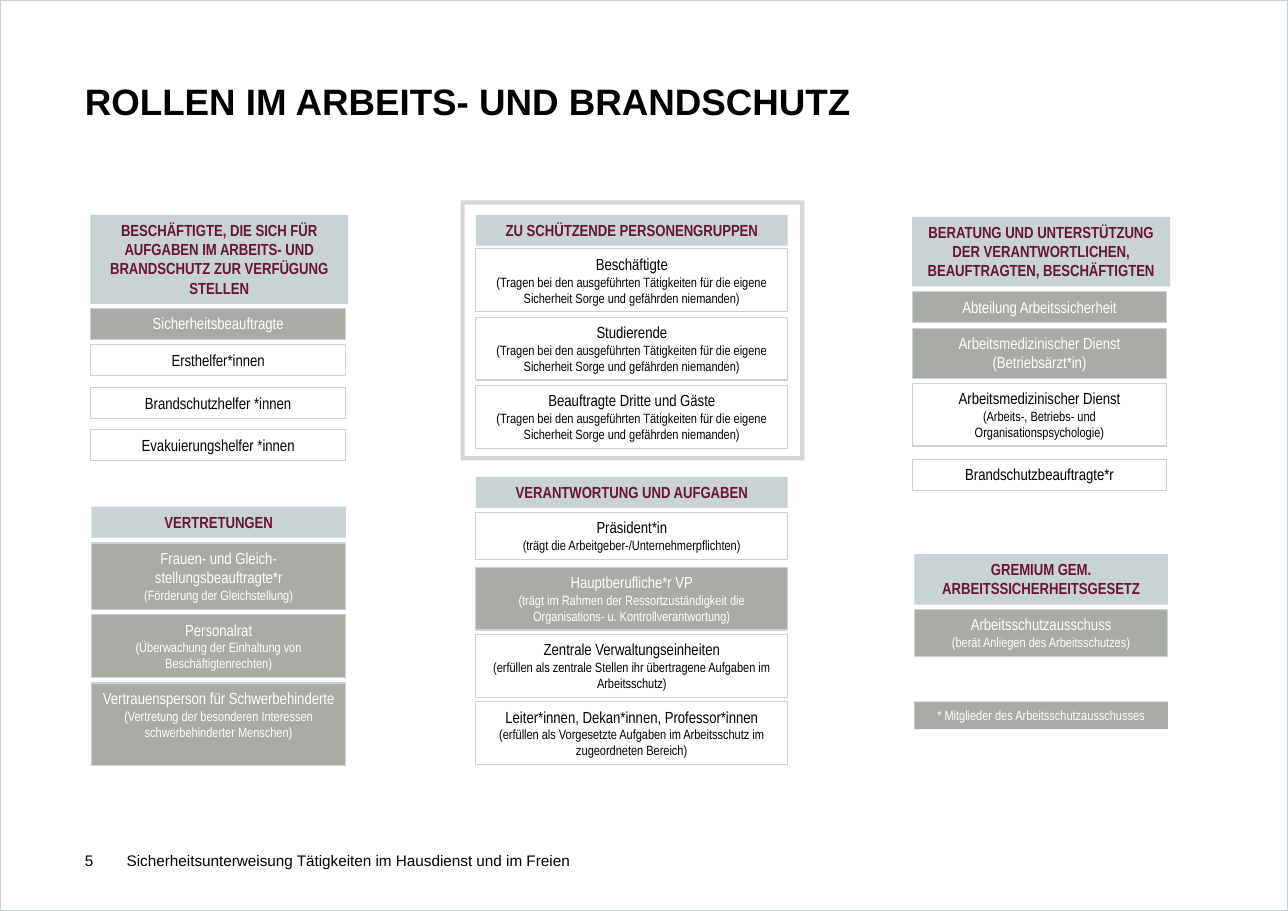
import pptx
import pptx.dml.color
import pptx.enum.shapes
import pptx.enum.text
import pptx.util

RGB = pptx.dml.color.RGBColor
SHAPE = pptx.enum.shapes.MSO_SHAPE
ANCHOR = pptx.enum.text.MSO_ANCHOR
ALIGN = pptx.enum.text.PP_ALIGN
Pt = pptx.util.Pt

PX = 9144
BLACK = RGB(0x00, 0x00, 0x00)
WHITE = RGB(0xFF, 0xFF, 0xFF)
MIST = RGB(0xC9, 0xD2, 0xD5)
STONE = RGB(0xA8, 0xAC, 0xA5)
FRAME = RGB(0xD6, 0xD7, 0xD4)
WINE = RGB(0x69, 0x16, 0x33)

TITLE_FONT = {"name": "Arial", "size": Pt(24), "bold": True}
FOOTER_FONT = {"name": "Arial", "size": Pt(10), "bold": False}
HEADING_FONT = {"name": "Arial Narrow", "size": Pt(10.5), "bold": True}
ROLE_FONT = {"name": "Arial Narrow", "size": Pt(10.5), "bold": False}
DETAIL_FONT = {"name": "Arial Narrow", "size": Pt(8.8), "bold": False}

HEADING = {"fill": MIST, "line": None, "ink": WINE, "fonts": [HEADING_FONT]}
MEMBER = {"fill": STONE, "line": MIST, "ink": WHITE, "fonts": [ROLE_FONT, DETAIL_FONT]}
OTHER = {"fill": None, "line": MIST, "ink": BLACK, "fonts": [ROLE_FONT, DETAIL_FONT]}
LEGEND = {"fill": STONE, "line": None, "ink": WHITE, "fonts": [DETAIL_FONT]}

DUTY_OF_CARE = ("(Tragen bei den ausgeführten Tätigkeiten für die eigene "
                "Sicherheit Sorge und gefährden niemanden)")

GROUPS = [
    (82, 234, [
        (195, 81, HEADING, ["BESCHÄFTIGTE, DIE SICH FÜR AUFGABEN IM ARBEITS- UND "
                            "BRANDSCHUTZ ZUR VERFÜGUNG STELLEN"]),
    ]),
    (82, 232, [
        (280, 28, MEMBER, ["Sicherheitsbeauftragte"]),
        (313, 28, OTHER, ["Ersthelfer*innen"]),
        (352, 28, OTHER, ["Brandschutzhelfer *innen"]),
        (390, 28, OTHER, ["Evakuierungshelfer *innen"]),
    ]),
    (83, 231, [
        (460, 28, HEADING, ["VERTRETUNGEN"]),
        (493, 60, MEMBER, ["Frauen- und Gleich-stellungsbeauftragte*r",
                           "(Förderung der Gleichstellung)"]),
        (558, 57, MEMBER, ["Personalrat",
                           "(Überwachung der Einhaltung von Beschäftigtenrechten)"]),
        (620, 75, MEMBER, ["Vertrauensperson für Schwerbehinderte",
                           "(Vertretung der besonderen Interessen "
                           "schwerbehinderter Menschen)"]),
    ]),
    (432, 283, [
        (195, 28, HEADING, ["ZU SCHÜTZENDE PERSONENGRUPPEN"]),
        (226, 57, OTHER, ["Beschäftigte", DUTY_OF_CARE]),
        (288, 57, OTHER, ["Studierende", DUTY_OF_CARE]),
        (350, 57, OTHER, ["Beauftragte Dritte und Gäste", DUTY_OF_CARE]),
        (433, 28, HEADING, ["VERANTWORTUNG UND AUFGABEN"]),
        (465, 43, OTHER, ["Präsident*in",
                          "(trägt die Arbeitgeber-/Unternehmerpflichten)"]),
        (515, 57, MEMBER, ["Hauptberufliche*r VP",
                           "(trägt im Rahmen der Ressortzuständigkeit die "
                           "Organisations- u. Kontrollverantwortung)"]),
        (576, 57, OTHER, ["Zentrale Verwaltungseinheiten",
                          "(erfüllen als zentrale Stellen ihr übertragene "
                          "Aufgaben im Arbeitsschutz)"]),
        (637, 57, OTHER, ["Leiter*innen, Dekan*innen, Professor*innen",
                          "(erfüllen als Vorgesetzte Aufgaben im Arbeitsschutz "
                          "im zugeordneten Bereich)"]),
    ]),
    (828, 234, [
        (197, 63, HEADING, ["BERATUNG UND UNTERSTÜTZUNG DER VERANTWORTLICHEN, "
                            "BEAUFTRAGTEN, BESCHÄFTIGTEN"]),
    ]),
    (828, 231, [
        (265, 28, MEMBER, ["Abteilung Arbeitssicherheit"]),
        (298, 46, MEMBER, ["Arbeitsmedizinischer Dienst (Betriebsärzt*in)"]),
        (348, 57, OTHER, ["Arbeitsmedizinischer Dienst",
                          "(Arbeits-, Betriebs- und Organisationspsychologie)"]),
        (417, 28, OTHER, ["Brandschutzbeauftragte*r"]),
    ]),
    (830, 230, [
        (503, 46, HEADING, ["GREMIUM GEM. ARBEITSSICHERHEITSGESETZ"]),
        (553, 43, MEMBER, ["Arbeitsschutzausschuss",
                           "(berät Anliegen des Arbeitsschutzes)"]),
        (637, 25, LEGEND, ["* Mitglieder des Arbeitsschutzausschusses"]),
    ]),
]


class RoleChart:
    def __init__(self, deck):
        self.slide = deck.slides.add_slide(deck.slide_layouts[5])

    def lettering(self, frame, texts, fonts, ink, align, **layout):
        settings = {"word_wrap": True, "vertical_anchor": ANCHOR.TOP,
                    "auto_size": pptx.enum.text.MSO_AUTO_SIZE.NONE, **layout}
        for name, value in settings.items():
            setattr(frame, name, value)
        for index, (text, font) in enumerate(zip(texts, fonts)):
            paragraph = frame.add_paragraph() if index else frame.paragraphs[0]
            paragraph.text = text
            paragraph.alignment = align
            for name, value in font.items():
                setattr(paragraph.font, name, value)
            paragraph.font.color.rgb = ink

    def title(self, text, left, top, width, height):
        heading = self.slide.shapes.title
        place = {"left": left, "top": top, "width": width, "height": height}
        for name, value in place.items():
            setattr(heading, name, value * PX)
        self.lettering(heading.text_frame, [text], [TITLE_FONT], BLACK, ALIGN.LEFT,
                       margin_left=0, margin_right=0, margin_top=0, margin_bottom=0)
        heading.text_frame.paragraphs[0].line_spacing = 0.9

    def footer(self, text, left, top, width, height):
        box = self.slide.shapes.add_textbox(left * PX, top * PX, width * PX, height * PX)
        self.lettering(box.text_frame, [text], [FOOTER_FONT], BLACK, ALIGN.LEFT,
                       margin_left=0, margin_right=0, vertical_anchor=ANCHOR.MIDDLE)

    def outline(self, kind, left, top, width, height, fill=None, line=None, weight=0.75):
        shape = self.slide.shapes.add_shape(
            kind, left * PX, top * PX, width * PX, height * PX)
        shape.shadow.inherit = False
        if fill is None:
            shape.fill.background()
        else:
            shape.fill.solid()
            shape.fill.fore_color.rgb = fill
        if line is None:
            shape.line.fill.background()
        else:
            shape.line.color.rgb = line
            shape.line.width = Pt(weight)
        return shape

    def role(self, left, top, width, height, look, texts):
        card = self.outline(SHAPE.RECTANGLE, left, top, width, height,
                            look["fill"], look["line"])
        self.lettering(card.text_frame, texts, look["fonts"], look["ink"], ALIGN.CENTER)


def main():
    deck = pptx.Presentation()
    deck.slide_width = 1169 * PX
    deck.slide_height = 827 * PX
    chart = RoleChart(deck)
    chart.outline(SHAPE.RECTANGLE, 0, 0, 1169, 827, line=MIST, weight=1)
    chart.title("ROLLEN IM ARBEITS- UND BRANDSCHUTZ", 77, 76, 1018, 133)
    chart.footer("5", 77, 761, 31, 40)
    chart.footer("Sicherheitsunterweisung Tätigkeiten im Hausdienst und im Freien",
                 115, 761, 745, 40)
    for left, width, roles in GROUPS:
        for top, height, look, texts in roles:
            chart.role(left, top, width, height, look, texts)
    protected = chart.outline(SHAPE.FRAME, 418, 182, 312, 236, fill=FRAME)
    protected.adjustments[0] = 0.016
    deck.save("out.pptx")


if __name__ == "__main__":
    main()
